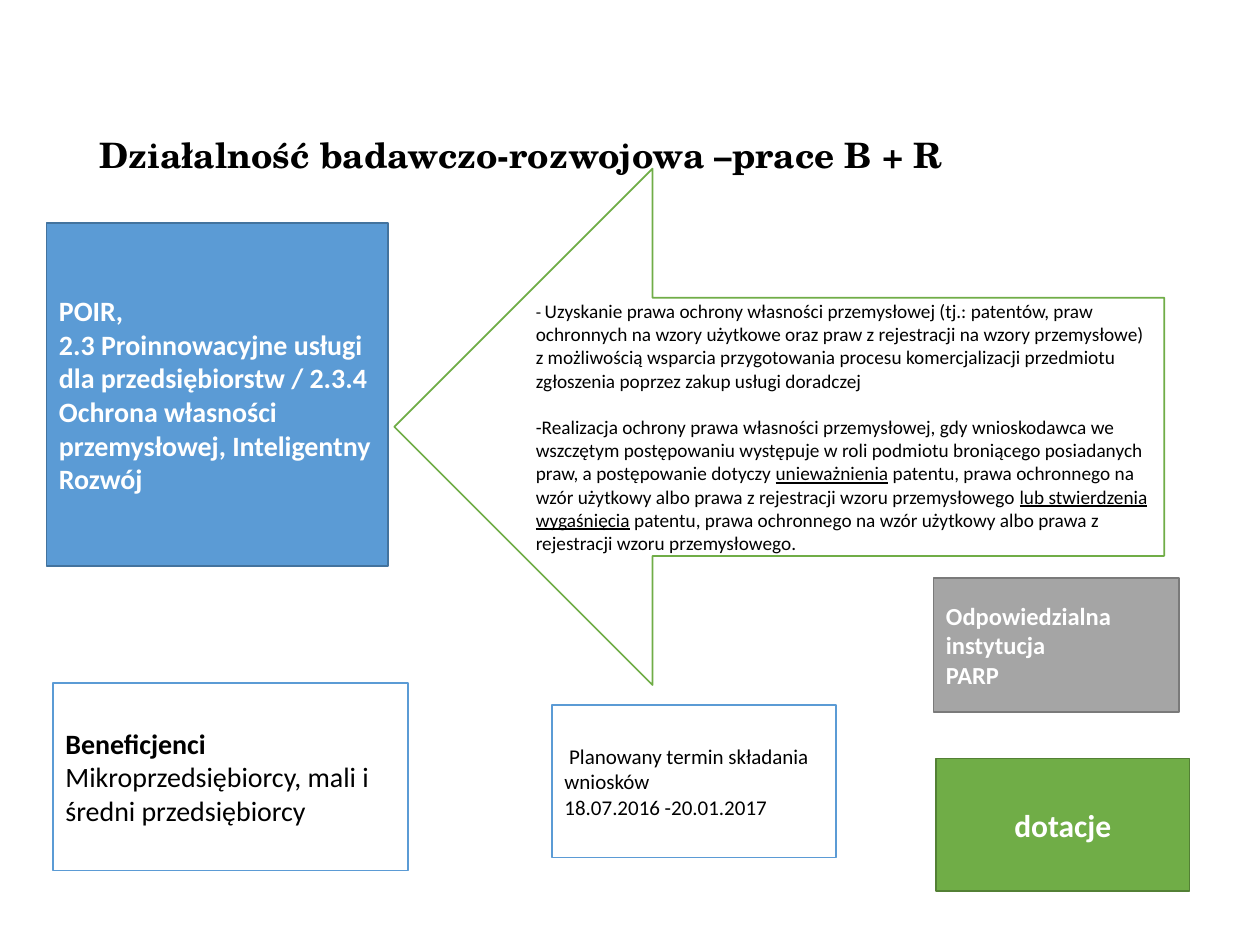
import pptx
import pptx.util
import pptx.dml.color
import pptx.enum.shapes
import pptx.enum.text

Cm = pptx.util.Cm
Pt = pptx.util.Pt
Kind = pptx.enum.shapes.MSO_SHAPE
Anchor = pptx.enum.text.MSO_ANCHOR
Align = pptx.enum.text.PP_ALIGN


def tint(code):
    return pptx.dml.color.RGBColor.from_string(code)


def write(frame, paras, size, color, base):
    frame.word_wrap = True
    for num, runs in enumerate(paras):
        para = frame.paragraphs[0] if num == 0 else frame.add_paragraph()
        para.alignment = Align.LEFT
        for text, extra in runs:
            run = para.add_run()
            run.text = text
            style = {"name": "Calibri", "size": Pt(size), **base, **extra}
            for key, value in style.items():
                setattr(run.font, key, value)
            run.font.color.rgb = tint(color)


deck = pptx.Presentation()
deck.slide_width = Cm(25.4)
deck.slide_height = Cm(19.05)
slide = deck.slides.add_slide(deck.slide_layouts[6])

title = slide.shapes.add_textbox(Cm(1.75), Cm(2.67), Cm(21.9), Cm(2.59))
write(title.text_frame, [[("Działalność badawczo-rozwojowa –prace B + R", {})]],
      20, "000000", {"name": "TeX Gyre Schola", "bold": True})
title.text_frame.paragraphs[0].line_spacing = 0.9

bold = {"bold": True}
line = {"underline": True}
goals = [
    [("-", {"size": Pt(10)}),
     (" ", {"size": Pt(9)}),
     ("Uzyskanie prawa ochrony własności przemysłowej (tj.: patentów, praw "
      "ochronnych na wzory użytkowe oraz praw z rejestracji na wzory przemysłowe) "
      "z możliwością wsparcia przygotowania procesu komercjalizacji przedmiotu "
      "zgłoszenia poprzez zakup usługi doradczej", {})],
    [("-Realizacja ochrony prawa własności przemysłowej, gdy wnioskodawca we "
      "wszczętym postępowaniu występuje w roli podmiotu broniącego posiadanych "
      "praw, a postępowanie dotyczy ", {}),
     ("unieważnienia", line),
     (" patentu, prawa ochronnego na wzór użytkowy albo prawa z rejestracji "
      "wzoru przemysłowego ", {}),
     ("lub stwierdzenia wygaśnięcia", line),
     (" patentu, prawa ochronnego na wzór użytkowy albo prawa z rejestracji "
      "wzoru przemysłowego.", {})],
]
program = [
    [("POIR,", {})],
    [("2.3 Proinnowacyjne usługi dla przedsiębiorstw / 2.3.4 Ochrona własności "
      "przemysłowej, Inteligentny Rozwój", {})],
]
firms = [
    [("Beneficjenci", bold)],
    [("Mikroprzedsiębiorcy, mali i średni przedsiębiorcy", {})],
]
dates = [
    [(" Planowany termin składania wniosków", {})],
    [("18.07.2016 -20.01.2017", {})],
]
agency = [[("Odpowiedzialna instytucja", {})], [("PARP", {})]]
grant = [[("dotacje", {})]]

boxes = [
    (Kind.RECTANGLE, (0.94, 4.5, 6.88, 6.91), "5B9BD5", "43739E", program, 16, "FFFFFF", bold),
    (Kind.LEFT_ARROW, (7.95, 3.4, 15.52, 10.41), "FFFFFF", "70AD47", goals, 11, "000000", {}),
    (Kind.RECTANGLE, (1.07, 13.77, 7.16, 3.78), "FFFFFF", "5B9BD5", firms, 16, "000000", {}),
    (Kind.RECTANGLE, (11.13, 14.22, 5.72, 3.07), "FFFFFF", "5B9BD5", dates, 12, "000000", {}),
    (Kind.RECTANGLE, (18.82, 11.66, 4.95, 2.69), "A5A5A5", "7A7A7A", agency, 14, "FFFFFF", bold),
    (Kind.RECTANGLE, (18.87, 15.29, 5.11, 2.67), "70AD47", "538035", grant, 18, "FFFFFF", bold),
]
made = []
for kind, place, fill, edge, paras, size, color, base in boxes:
    box = slide.shapes.add_shape(kind, *map(Cm, place))
    box.shadow.inherit = False
    box.fill.solid()
    box.fill.fore_color.rgb = tint(fill)
    box.line.color.rgb = tint(edge)
    box.line.width = Pt(1)
    box.text_frame.vertical_anchor = Anchor.MIDDLE
    write(box.text_frame, paras, size, color, base)
    made.append(box)

made[1].text_frame.paragraphs[1].space_before = Pt(13.4)
made[-1].text_frame.paragraphs[0].alignment = Align.CENTER

deck.save("out.pptx")
